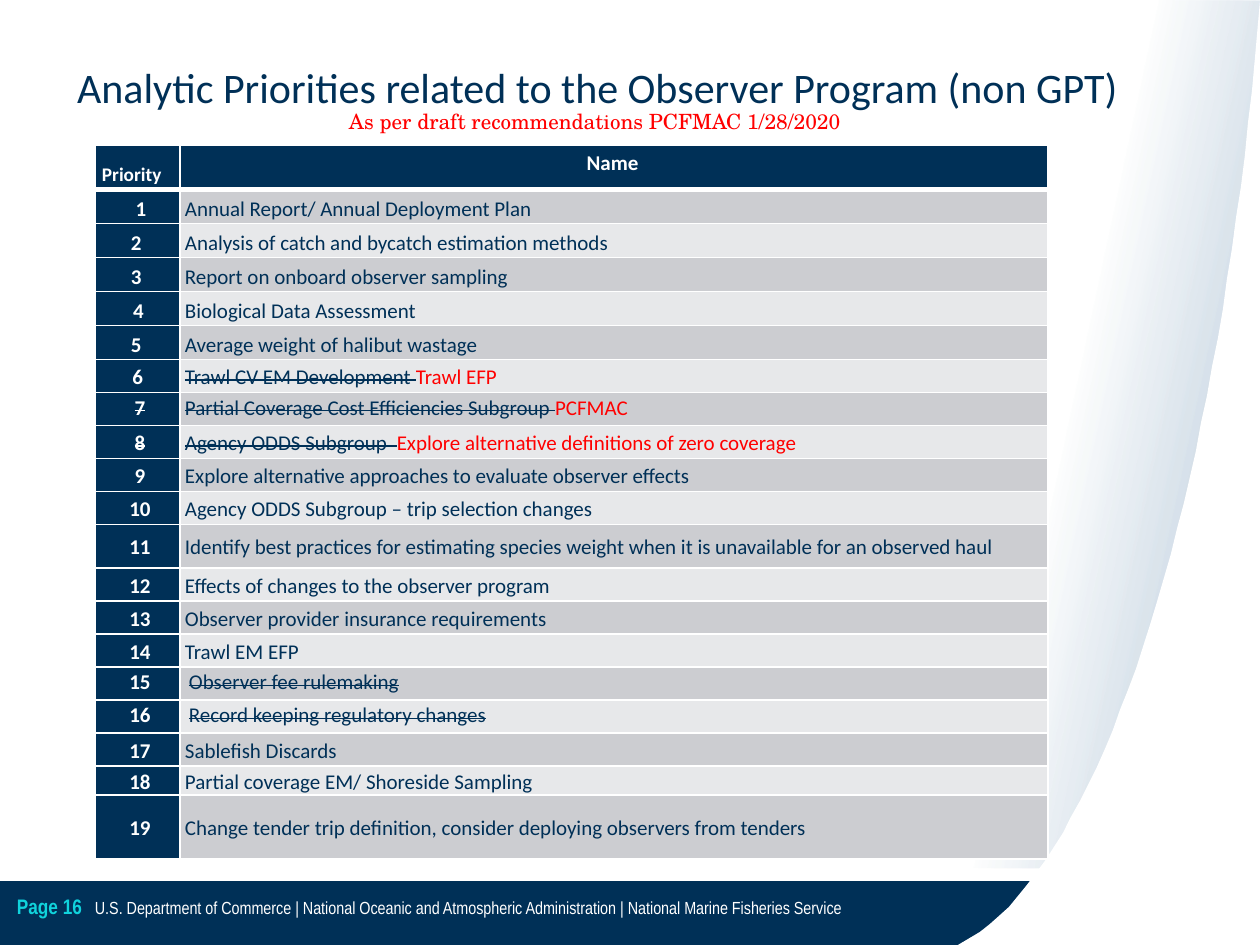
from lxml import etree
from pptx import Presentation
from pptx import util as u
from pptx.dml.color import RGBColor
from pptx.enum import text
from pptx.oxml import parse_xml
from pptx.oxml.ns import nsdecls

PX = 914400 / 126
NAVY, WHITE, RED, CYAN = "003057", "FFFFFF", "FF0000", "10D3DC"
BANDS = ("CCCDD1", "E7E8EA")
CENTER, LEFT = text.PP_ALIGN.CENTER, text.PP_ALIGN.LEFT
TOP, MIDDLE = text.MSO_ANCHOR.TOP, text.MSO_ANCHOR.MIDDLE

ROW_HEIGHTS = [44] + [34] * 5 + [33] * 5 + [44] + [33] * 6 + [29, 64]
ITEMS = [
    (" 1", "Annual Report/ Annual Deployment Plan"),
    ("2 ", "Analysis of catch and bycatch estimation methods"),
    ("3 ", "Report on onboard observer sampling"),
    ("4", "Biological Data Assessment"),
    ("5 ", "Average weight of halibut wastage"),
    ("6 ", "Trawl CV EM Development ", "Trawl EFP"),
    ("7", "Partial Coverage Cost Efficiencies Subgroup ", "PCFMAC"),
    ("8", "Agency ODDS Subgroup  ", "Explore alternative definitions of zero coverage"),
    ("9", "Explore alternative approaches to evaluate observer effects"),
    ("10", "Agency ODDS Subgroup – trip selection changes"),
    ("11", "Identify best practices for estimating species weight when it is "
           "unavailable for an observed haul"),
    ("12", "Effects of changes to the observer program"),
    ("13", "Observer provider insurance requirements"),
    ("14", "Trawl EM EFP"),
    ("15", "Observer fee rulemaking"),
    ("16", "Record keeping regulatory changes"),
    ("17", "Sablefish Discards"),
    ("18", "Partial coverage EM/ Shoreside Sampling"),
    ("19", "Change tender trip definition, consider deploying observers from tenders"),
]
STRUCK_NAMES = {6, 7, 8, 15, 16}
STRUCK_NUMBERS = {7, 8}
TOP_ROWS = {7, 15, 16}
INDENTED = {15, 16}


def emu(n):
    return u.Emu(round(n * PX))


def rgb(color):
    return RGBColor.from_string(color)


def bezier(p0, p1, p2, p3, steps=40):
    for i in range(1, steps + 1):
        t = i / steps
        w = ((1 - t) ** 3, 3 * t * (1 - t) ** 2, 3 * t * t * (1 - t), t ** 3)
        yield tuple(sum(k * q[a] for k, q in zip(w, (p0, p1, p2, p3))) for a in (0, 1))


class Deck:
    """Holds the presentation style and the current slide."""

    def __init__(self, font="Calibri"):
        self.font = font
        self.prs = Presentation()
        self.prs.slide_width, self.prs.slide_height = emu(1260), emu(945)
        self.s = self.prs.slides.add_slide(self.prs.slide_layouts[6])

    def style(self, r, size, color, bold=False, font=None, strike=False):
        f = r.font
        f.name, f.size, f.bold = font or self.font, u.Pt(size), bold
        f.color.rgb = rgb(color)
        if strike:
            r._r.get_or_add_rPr().set("strike", "sngStrike")

    def outline(self, points, fill):
        fb = self.s.shapes.build_freeform(*points[0], scale=PX)
        fb.add_line_segments(points[1:], close=True)
        sp = fb.convert_to_shape()
        sp.shadow.inherit = False
        sp.line.fill.background()
        sp.fill.solid()
        sp.fill.fore_color.rgb = rgb(fill)
        return sp

    def fade(self, points, color, start, alpha, angle):
        sp = self.outline(points, color)
        stops = "".join(
            f'<a:gs pos="{pos * 1000}"><a:srgbClr val="{color}">'
            f'<a:alpha val="{a * 1000}"/></a:srgbClr></a:gs>'
            for pos, a in ((start, 0), (100, alpha)))
        grad = parse_xml(f'<a:gradFill {nsdecls("a")} rotWithShape="1"><a:gsLst>{stops}</a:gsLst>'
                         f'<a:lin ang="{angle * 60000}" scaled="0"/></a:gradFill>')
        solid = sp._element.spPr.find("{*}solidFill")
        solid.getparent().replace(solid, grad)

    def label(self, box, words, size, color, insets, align=LEFT, anchor=TOP, wrap=True, **style):
        tf = self.s.shapes.add_textbox(*map(emu, box)).text_frame
        tf.text = words
        tf.word_wrap, tf.vertical_anchor = wrap, anchor
        tf.margin_left, tf.margin_top, tf.margin_right, tf.margin_bottom = map(emu, insets)
        p = tf.paragraphs[0]
        p.alignment = align
        self.style(p.runs[0], size, color, **style)

    def cell(self, c, runs, fill, insets, align=LEFT, anchor=MIDDLE, indent=0, bottom=1):
        c.margin_left, c.margin_top, c.margin_right, c.margin_bottom = map(emu, insets)
        c.vertical_anchor = anchor
        c.fill.solid()
        c.fill.fore_color.rgb = rgb(fill)
        tcPr = c._tc.get_or_add_tcPr()
        for i, side in enumerate("LRTB"):
            width = u.Pt(bottom if side == "B" else 1)
            tcPr.insert(i, etree.fromstring(
                f'<a:ln{side} {nsdecls("a")} w="{width}"><a:solidFill>'
                f'<a:srgbClr val="{WHITE}"/></a:solidFill></a:ln{side}>'))
        p = c.text_frame.paragraphs[0]
        p.alignment, p.line_spacing = align, 1.07
        if indent:
            p._p.get_or_add_pPr().set("marL", str(emu(indent)))
        for words, style in runs:
            r = p.add_run()
            r.text = words
            self.style(r, **style)

    def table(self, x, y, widths, heights):
        t = self.s.shapes.add_table(len(heights), len(widths), emu(x), emu(y),
                                    emu(sum(widths)), emu(sum(heights))).table
        t.first_row = t.horz_banding = False
        for col, w in zip(t.columns, widths):
            col.width = emu(w)
        for row, h in zip(t.rows, heights):
            row.height = emu(h)
        return t

    def priorities(self):
        t = self.table(95, 145, (85, 868), ROW_HEIGHTS)
        head = dict(color=WHITE, bold=True)
        wide, tight = (5, 4, 3, 0), (5, 1, 0, 0)
        self.cell(t.cell(0, 0), [("Priority", dict(head, size=11)), (" ", dict(head, size=18))],
                  NAVY, wide, indent=2, bottom=3)
        self.cell(t.cell(0, 1), [("Name ", dict(head, size=12))], NAVY, wide, CENTER, TOP, bottom=3)
        for n, (number, name, *added) in enumerate(ITEMS, 1):
            insets = wide if n < 6 else tight
            anchor = TOP if n in TOP_ROWS else MIDDLE
            self.cell(t.cell(n, 0), [(number, dict(head, size=12, strike=n in STRUCK_NUMBERS))],
                      NAVY, insets, CENTER, anchor)
            runs = [(name, dict(size=12, color=NAVY, strike=n in STRUCK_NAMES))]
            runs += [(words, dict(size=12, color=RED)) for words in added]
            self.cell(t.cell(n, 1), runs, BANDS[(n - 1) % 2], insets, anchor=anchor,
                      indent=4 if n in INDENTED else 0)


def main():
    d = Deck()
    d.outline([(0, 881), (1260, 881), (1260, 945), (0, 945)], NAVY)
    d.fade([(1252, 869), (948, 868), (1129, 0), (1260, 1)], "07477D", 42, 34, 12)
    curve = bezier((980, 932), (1109, 837), (1213, 499), (1255, 58))
    d.outline([(1260, 1), (1260, 945), (958, 945), (980, 932), *curve], WHITE)
    d.label((95, 871, 922, 74),
            "U.S. Department of Commerce | National Oceanic and Atmospheric Administration"
            " | National Marine Fisheries Service",
            10, WHITE, (0, 6, 0, 6), anchor=MIDDLE, font="Arial Narrow")
    d.label((17, 868, 77, 77), "Page 16", 12, CYAN, (0, 0, 0, 0), anchor=MIDDLE,
            font="Arial Narrow", bold=True)
    d.priorities()
    d.label((40, 29, 1115, 117), "Analytic Priorities related to the Observer Program (non GPT)",
            24, NAVY, (13, 32, 13, 6), CENTER)
    d.label((336, 103, 523, 38), "As per draft recommendations PCFMAC 1/28/2020",
            12, RED, (13, 6, 13, 6), wrap=False, font="TeX Gyre Schola")
    d.prs.save("out.pptx")


if __name__ == "__main__":
    main()
